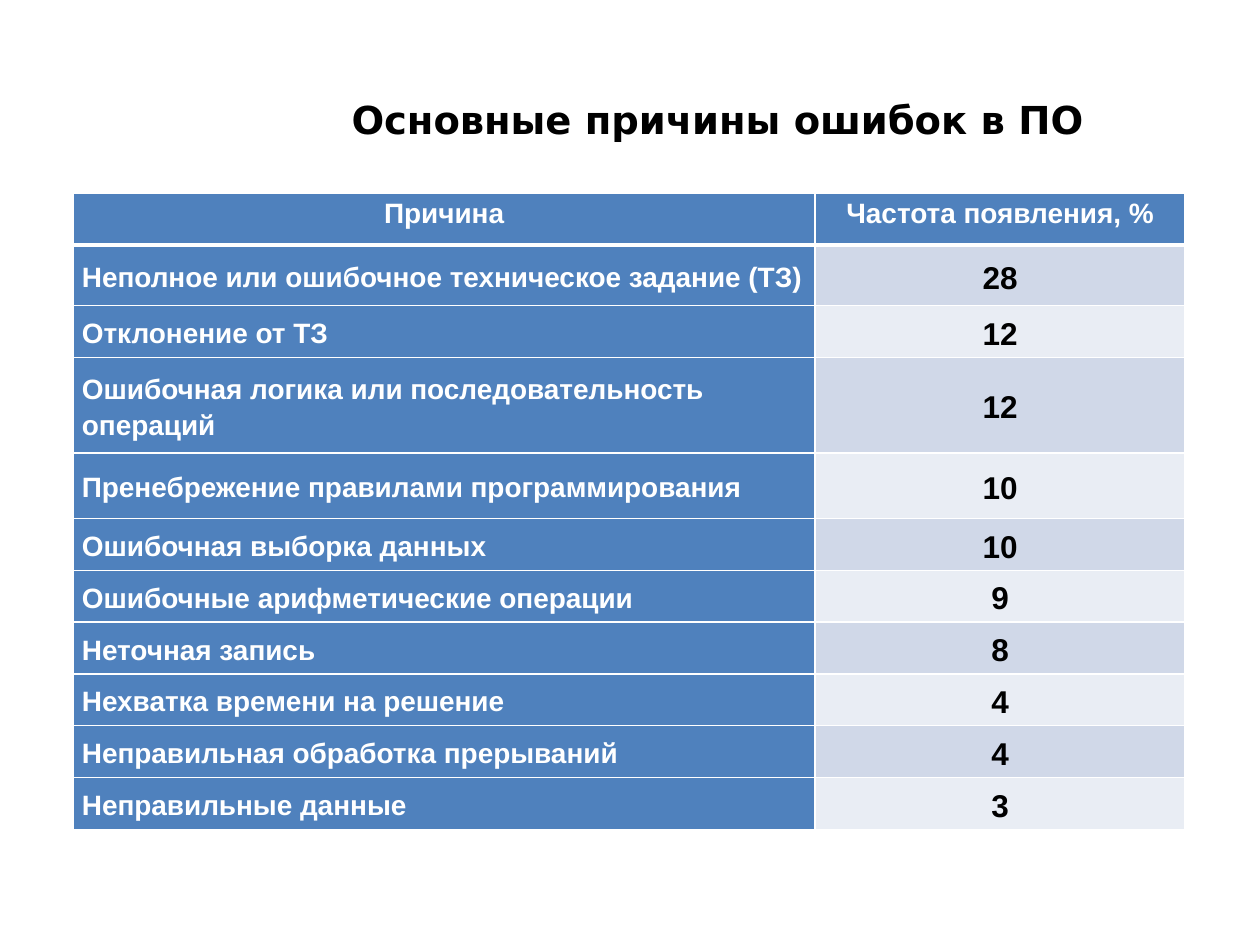
from dataclasses import dataclass

from lxml import etree
from pptx import Presentation
from pptx.dml.color import RGBColor
from pptx.enum.text import MSO_ANCHOR, PP_ALIGN
from pptx.oxml.ns import qn
from pptx.util import Pt

LEFT, CENTER = PP_ALIGN.LEFT, PP_ALIGN.CENTER
TOP, MIDDLE = MSO_ANCHOR.TOP, MSO_ANCHOR.MIDDLE

COLORS = {
    "accent": "4F81BD",
    "band_dark": "D0D8E8",
    "band_light": "E9EDF4",
    "white": "FFFFFF",
    "black": "000000",
}
CELL_FORMAT = {
    "margin_left": Pt(5),
    "margin_right": Pt(5),
    "margin_top": Pt(0),
    "margin_bottom": Pt(0),
}
COLUMN_WIDTHS = (424, 211.5)
ROW_HEIGHT = 29.6


@dataclass
class TextStyle:
    size: float
    color: str
    align: PP_ALIGN
    font: str = "Arial"
    line_spacing: float = 1.15


@dataclass
class Cause:
    name: str
    percent: int
    height: float = ROW_HEIGHT


TITLE_STYLE = TextStyle(22, "black", CENTER, "DejaVu Sans", 1.0)
HEADER_STYLE = TextStyle(16, "white", CENTER)
NAME_STYLE = TextStyle(16, "white", LEFT)
PERCENT_STYLE = TextStyle(18, "black", CENTER)

HEADERS = ("Причина", "Частота появления, %")
CAUSES = [
    Cause("Неполное или ошибочное техническое задание (ТЗ)", 28, 34.6),
    Cause("Отклонение от ТЗ", 12),
    Cause("Ошибочная логика или последовательность операций", 12, 54.7),
    Cause("Пренебрежение правилами программирования", 10, 37.4),
    Cause("Ошибочная выборка данных", 10),
    Cause("Ошибочные арифметические операции", 9),
    Cause("Неточная запись", 8),
    Cause("Нехватка времени на решение", 4),
    Cause("Неправильная обработка прерываний", 4),
    Cause("Неправильные данные", 3),
]


def apply_format(target, values: dict) -> None:
    for name, value in values.items():
        setattr(target, name, value)


def write_text(frame, text: str, style: TextStyle) -> None:
    para = frame.paragraphs[0]
    apply_format(para, {"alignment": style.align, "line_spacing": style.line_spacing})
    span = para.add_run()
    span.text = text
    apply_format(span.font, {"name": style.font, "size": Pt(style.size), "bold": True})
    span.font.color.rgb = RGBColor.from_string(COLORS[style.color])


def add_borders(cell, top: float, bottom: float) -> None:
    properties = cell._tc.get_or_add_tcPr()
    for side, width in (("L", 1), ("R", 1), ("T", top), ("B", bottom)):
        line = etree.SubElement(properties, qn(f"a:ln{side}"), w=str(Pt(width)))
        fill = etree.SubElement(line, qn("a:solidFill"))
        etree.SubElement(fill, qn("a:srgbClr"), val=COLORS["white"])


def fill_cell(cell, text: str, style: TextStyle, fill: str, anchor: MSO_ANCHOR,
              top: float = 1, bottom: float = 1) -> None:
    apply_format(cell, {**CELL_FORMAT, "vertical_anchor": anchor})
    add_borders(cell, top, bottom)
    cell.fill.solid()
    cell.fill.fore_color.rgb = RGBColor.from_string(COLORS[fill])
    write_text(cell.text_frame, text, style)


def add_title(page, text: str) -> None:
    box = page.shapes.add_textbox(Pt(104), Pt(22), Pt(612), Pt(92))
    apply_format(box.text_frame, {"word_wrap": True, "vertical_anchor": MIDDLE})
    write_text(box.text_frame, text, TITLE_STYLE)


def add_causes_table(page, causes: list[Cause]) -> None:
    heights = [ROW_HEIGHT] + [cause.height for cause in causes]
    table = page.shapes.add_table(
        len(heights), len(HEADERS), Pt(41.8), Pt(110.5),
        Pt(sum(COLUMN_WIDTHS)), Pt(sum(heights)),
    ).table
    for column, width in zip(table.columns, COLUMN_WIDTHS):
        column.width = Pt(width)
    for row, height in zip(table.rows, heights):
        row.height = Pt(height)
    for index, header in enumerate(HEADERS):
        fill_cell(table.cell(0, index), header, HEADER_STYLE, "accent", TOP, bottom=3)
    for index, cause in enumerate(causes, start=1):
        top = 3 if index == 1 else 1
        band = "band_dark" if index % 2 else "band_light"
        fill_cell(table.cell(index, 0), cause.name, NAME_STYLE, "accent", MIDDLE, top)
        fill_cell(table.cell(index, 1), str(cause.percent), PERCENT_STYLE, band, MIDDLE, top)


def main() -> None:
    deck = Presentation()
    apply_format(deck, {"slide_width": Pt(720), "slide_height": Pt(540)})
    page = deck.slides.add_slide(deck.slide_layouts[6])
    add_title(page, "Основные причины ошибок в ПО")
    add_causes_table(page, CAUSES)
    deck.save("out.pptx")


if __name__ == "__main__":
    main()
